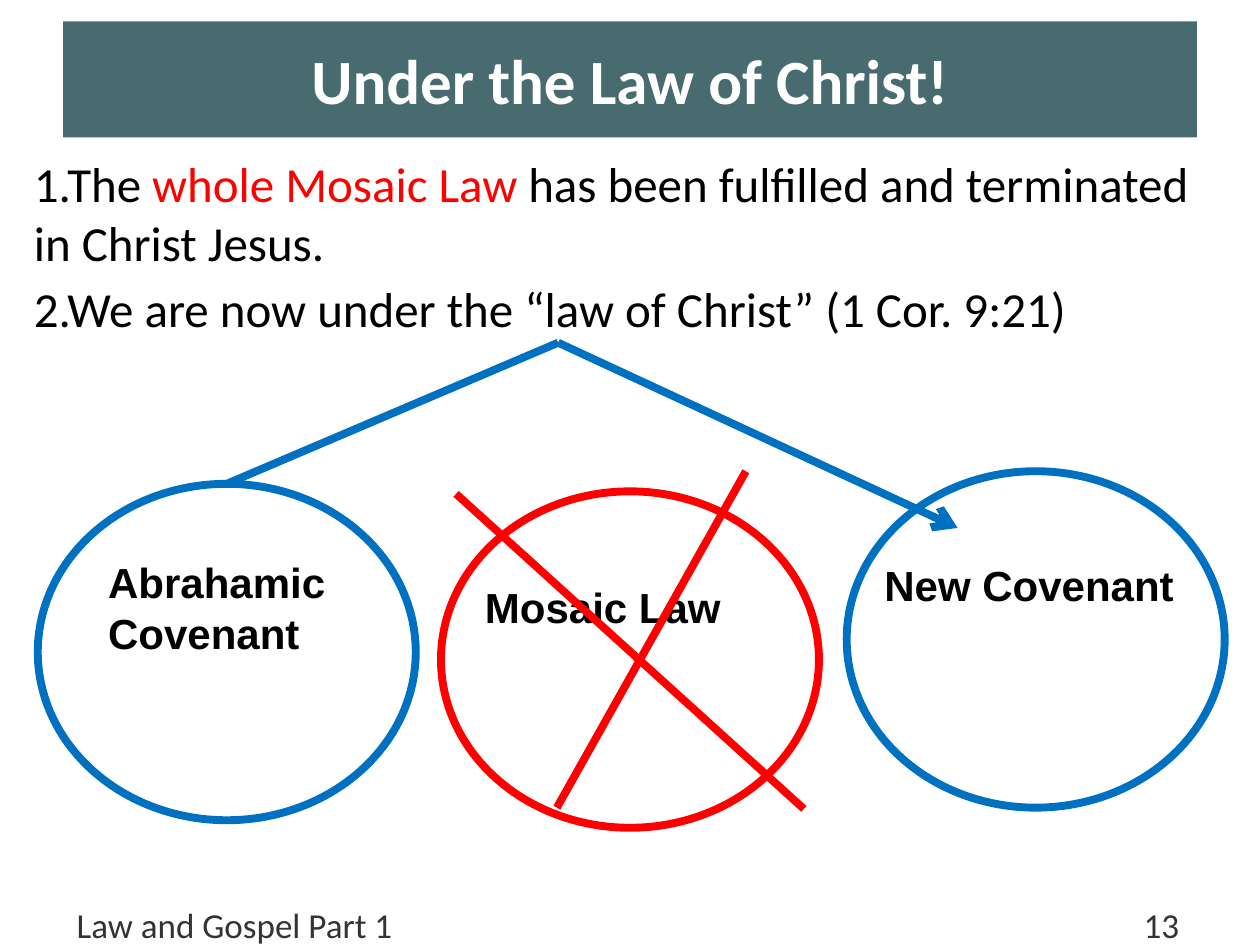
from lxml.etree import SubElement
from pptx import Presentation
from pptx.dml.color import RGBColor
from pptx.enum.shapes import MSO_CONNECTOR, MSO_SHAPE
from pptx.enum.text import MSO_ANCHOR, MSO_AUTO_SIZE, PP_ALIGN
from pptx.oxml.ns import qn
from pptx.util import Inches, Pt

# Content
TITLE = "Under the Law of Christ!"
POINTS = [
    [("1.The ", "black"), ("whole Mosaic Law ", "red"),
     ("has been fulfilled and terminated in Christ Jesus.", "black")],
    [("2.We are now under the “law of Christ” (1 Cor. 9:21)", "black")],
]
FOOTER = "Law and Gospel Part 1\t 13"
CIRCLE_SIZE = (3, 2.67)
# circle left and top, colour, label, label box
COVENANTS = [
    ((3.5, 3.9), "red", "Mosaic Law", (3.75, 4.57, 2.08, 0.5)),
    ((6.72, 3.74), "blue", "New Covenant", (6.92, 4.39, 2.79, 0.5)),
    ((0.3, 3.84), "blue", "Abrahamic Covenant", (0.76, 4.37, 2.08, 0.91)),
]
APEX = (4.43, 2.72)
# start, end, colour, arrowhead
LINES = [
    ((3.62, 3.92), (6.38, 6.42), "red", False),
    ((5.92, 3.74), (4.42, 6.41), "red", False),
    ((1.8, 3.84), APEX, "blue", False),
    (APEX, (7.6, 4.19), "blue", True),
]

THEME = {
    "colors": {name: RGBColor.from_string(code) for name, code in {
        "black": "000000", "white": "FFFFFF", "red": "FF0000",
        "blue": "0070C0", "teal": "486B70", "gray": "333333"}.items()},
    "sizes": {"title": 36, "body": 28, "label": 24, "footer": 20},
    "text_font": "Calibri",
    "label_font": "Arial",
    "line_width": 4.5,
}
COLORS = THEME["colors"]


def style(paragraph, size, color, font=THEME["text_font"], bold=False):
    paragraph.font.name = font
    paragraph.font.size = Pt(THEME["sizes"][size])
    paragraph.font.bold = bold
    paragraph.font.color.rgb = COLORS[color]


def add_text(page, place):
    box = page.shapes.add_textbox(*map(Inches, place))
    box.text_frame.word_wrap = True
    return box.text_frame


def set_line(line, color):
    line.color.rgb = COLORS[color]
    line.width = Pt(THEME["line_width"])


def add_circle(page, corner, color):
    circle = page.shapes.add_shape(
        MSO_SHAPE.OVAL, *map(Inches, corner + CIRCLE_SIZE))
    circle.shadow.inherit = False
    circle.fill.background()
    set_line(circle.line, color)


def add_line(page, start, end, color, arrow):
    connector = page.shapes.add_connector(
        MSO_CONNECTOR.STRAIGHT, *map(Inches, start + end))
    set_line(connector.line, color)
    if arrow:
        SubElement(connector.line._get_or_add_ln(), qn("a:tailEnd"), type="arrow")
    SubElement(connector._element.spPr, qn("a:effectLst"))


def main():
    deck = Presentation()
    deck.slide_width, deck.slide_height = Inches(10), Inches(7.5)
    page = deck.slides.add_slide(deck.slide_layouts[5])

    # Title band
    title = page.shapes.title
    title.left, title.top, title.width, title.height = map(
        Inches, (0.5, 0.17, 9, 0.92))
    title.fill.solid()
    title.fill.fore_color.rgb = COLORS["teal"]
    title.text_frame.text = TITLE
    title.text_frame.vertical_anchor = MSO_ANCHOR.MIDDLE
    heading = title.text_frame.paragraphs[0]
    heading.alignment = PP_ALIGN.CENTER
    style(heading, "title", "white", bold=True)

    # Footer with the page number on a right tab
    footer = add_text(page, (0.51, 7.17, 9, 0.33))
    footer.vertical_anchor = MSO_ANCHOR.MIDDLE
    paragraph = footer.paragraphs[0]
    paragraph.add_run().text = FOOTER
    style(paragraph, "footer", "gray")
    tabs = paragraph._p.get_or_add_pPr()
    tab_list = tabs.makeelement(qn("a:tabLst"))
    tabs.insert(0, tab_list)
    SubElement(tab_list, qn("a:tab"), pos=str(Inches(8.75)), algn="r")

    # Numbered points
    body = add_text(page, (0.17, 1.17, 9.67, 5.42))
    for index, spans in enumerate(POINTS):
        paragraph = body.add_paragraph() if index else body.paragraphs[0]
        paragraph.space_before = Pt(4)
        style(paragraph, "body", "black")
        for text, color in spans:
            span = paragraph.add_run()
            span.text = text
            span.font.color.rgb = COLORS[color]

    # Covenant circles and labels
    for corner, color, label, place in COVENANTS:
        add_circle(page, corner, color)
        frame = add_text(page, place)
        frame.auto_size = MSO_AUTO_SIZE.SHAPE_TO_FIT_TEXT
        frame.text = label
        style(frame.paragraphs[0], "label", "black", THEME["label_font"], True)

    # Cross and links
    for line in LINES:
        add_line(page, *line)

    deck.save("out.pptx")


if __name__ == "__main__":
    main()
